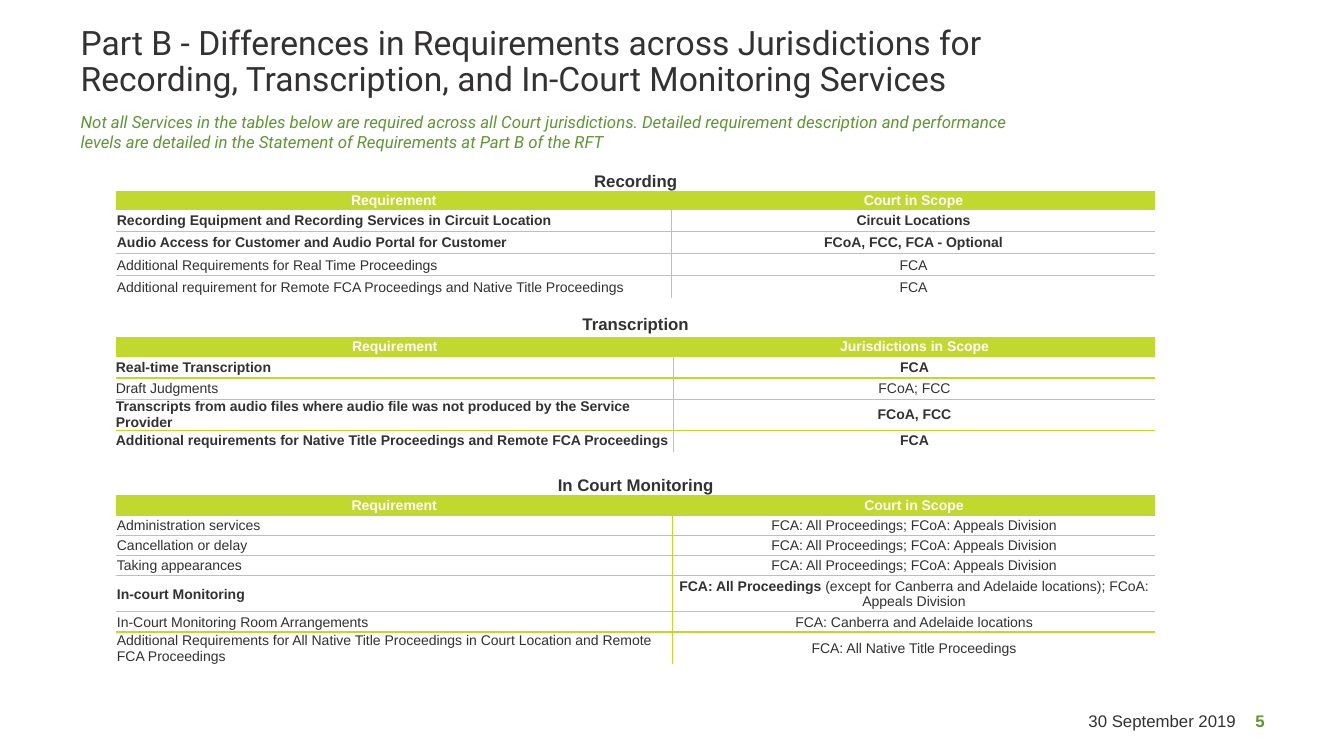
from lxml.etree import SubElement
from pptx import Presentation
from pptx.dml.color import RGBColor
from pptx.enum.text import MSO_ANCHOR, MSO_AUTO_SIZE, PP_ALIGN
from pptx.oxml.ns import qn
from pptx.util import Inches, Pt

INK = RGBColor(0x33, 0x31, 0x32)
GREEN = RGBColor(0x5E, 0x97, 0x32)
LIME = RGBColor(0xC1, 0xD8, 0x2F)
WHITE = RGBColor(0xFF, 0xFF, 0xFF)
NO_STYLE = "{2D5ABB26-0587-4C30-8999-92F81FD0307C}"

# Content
TITLE = ("Part B - Differences in Requirements across Jurisdictions for "
         "Recording, Transcription, and In-Court Monitoring Services")
INTRO = ("Not all Services in the tables below are required across all Court "
         "jurisdictions. Detailed requirement description and performance levels "
         "are detailed in the Statement of Requirements at Part B of the RFT")
DATE = "30 September 2019"
PAGE = "5"
APPEALS = "FCA: All Proceedings; FCoA: Appeals Division"

# Rows: requirement, scope, bold, then any plain text that ends the scope
TABLES = [
    dict(name="Recording", scope="Court in Scope", top=1.7, split=5.51, inset=0.01,
         heights=[0.18, 0.18, 0.22, 0.22, 0.22, 0.22],
         rows=[
             ("Recording Equipment and Recording Services in Circuit Location",
              "Circuit Locations", True),
             ("Audio Access for Customer and Audio Portal for Customer",
              "FCoA, FCC, FCA - Optional", True),
             ("Additional Requirements for Real Time Proceedings", "FCA", False),
             ("Additional requirement for Remote FCA Proceedings and Native Title "
              "Proceedings", "FCA", False),
         ]),
    dict(name="Transcription", scope="Jurisdictions in Scope", top=3.1, split=5.53,
         inset=0, heights=[0.24, 0.2, 0.21, 0.21, 0.31, 0.21],
         rows=[
             ("Real-time Transcription", "FCA", True),
             ("Draft Judgments", "FCoA; FCC", False),
             ("Transcripts from audio files where audio file was not produced by "
              "the Service Provider", "FCoA, FCC", True),
             ("Additional requirements for Native Title Proceedings and Remote FCA "
              "Proceedings", "FCA", True),
         ]),
    dict(name="In Court Monitoring", scope="Court in Scope", top=4.71, split=5.52,
         inset=0.01, heights=[0.2, 0.2, 0.2, 0.2, 0.2, 0.36, 0.2, 0.31],
         rows=[
             ("Administration services", APPEALS, False),
             ("Cancellation or delay", APPEALS, False),
             ("Taking appearances", APPEALS, False),
             ("In-court Monitoring", "FCA: All Proceedings ", True,
              "(except for Canberra and Adelaide locations); FCoA: Appeals Division"),
             ("In-Court Monitoring Room Arrangements",
              "FCA: Canberra and Adelaide locations", False),
             ("Additional Requirements for All Native Title Proceedings in Court "
              "Location and Remote FCA Proceedings",
              "FCA: All Native Title Proceedings", False),
         ]),
]
LEFT, WIDTH = 1.15, 10.31


def style(font, size, color, name="Arial", bold=None, italic=None):
    font.name, font.size, font.bold, font.italic = name, Pt(size), bold, italic
    font.color.rgb = color


def write(box, text, anchor=MSO_ANCHOR.TOP, right=0):
    frame = box.text_frame
    frame.auto_size = MSO_AUTO_SIZE.NONE
    frame.word_wrap = True
    frame.vertical_anchor = anchor
    frame.margin_left = frame.margin_top = frame.margin_bottom = 0
    frame.margin_right = Inches(right)
    para = frame.paragraphs[0]
    para.text = text
    return para


def add_text(slide, area, text, **opts):
    return write(slide.shapes.add_textbox(*map(Inches, area)), text, **opts)


def rule(cell, sides):
    props = cell._tc.get_or_add_tcPr()
    for side in "LRTB":
        line = SubElement(props, qn("a:ln" + side), w=str(Pt(1)))
        if side in sides:
            fill = SubElement(line, qn("a:solidFill"))
            SubElement(fill, qn("a:srgbClr"), val=str(LIME))
        else:
            SubElement(line, qn("a:noFill"))


def fill_cell(cell, parts, size, color, align, inset, sides="", back=None):
    """Parts are pairs of text and bold."""
    cell.vertical_anchor = MSO_ANCHOR.MIDDLE
    cell.margin_left = cell.margin_right = cell.margin_top = Inches(inset)
    cell.margin_bottom = 0
    para = cell.text_frame.paragraphs[0]
    para.alignment = align
    style(para.font, size, color)
    for text, bold in parts:
        run = para.add_run()
        run.text = text
        style(run.font, size, color, bold=bold)
    rule(cell, sides)
    if back:
        cell.fill.solid()
        cell.fill.fore_color.rgb = back
    else:
        cell.fill.background()


def add_grid(slide, data):
    heights, inset = data["heights"], data["inset"]
    count = len(heights)
    frame = slide.shapes.add_table(count, 2, Inches(LEFT), Inches(data["top"]),
                                   Inches(WIDTH), Inches(sum(heights)))
    grid = frame.table
    grid.first_row = grid.horz_banding = False
    grid._tbl.tblPr.find(qn("a:tableStyleId")).text = NO_STYLE
    for col, width in zip(grid.columns, (data["split"], WIDTH - data["split"])):
        col.width = Inches(width)
    for row, height in zip(grid.rows, heights):
        row.height = Inches(height)

    # Caption across both columns
    grid.cell(0, 0).merge(grid.cell(0, 1))
    fill_cell(grid.cell(0, 0), [(data["name"], True)], 12, INK,
              PP_ALIGN.CENTER, inset)

    # Column heads
    for col, text in enumerate(("Requirement", data["scope"])):
        fill_cell(grid.cell(1, col), [(text, True)], 10, WHITE, PP_ALIGN.CENTER,
                  inset, "RL"[col] + "B", LIME)

    # Requirements
    for num, (need, scope, bold, *rest) in enumerate(data["rows"], 2):
        edges = "T" if num == count - 1 else "TB"
        fill_cell(grid.cell(num, 0), [(need, bold)], 10, INK, PP_ALIGN.LEFT,
                  inset, edges + "R")
        parts = [(scope, bold)] + [(text, False) for text in rest]
        fill_cell(grid.cell(num, 1), parts, 10, INK, PP_ALIGN.CENTER,
                  inset, edges + "L")


def main():
    deck = Presentation()
    deck.slide_width, deck.slide_height = Inches(13.33), Inches(7.5)
    slide = deck.slides.add_slide(deck.slide_layouts[5])

    # Title and intro
    title = slide.shapes.title
    title.left, title.top, title.width, title.height = map(
        Inches, (0.8, 0.41, 9.56, 0.57))
    para = write(title, TITLE, MSO_ANCHOR.BOTTOM)
    para.alignment = PP_ALIGN.LEFT
    para.line_spacing = 0.9
    style(para.font, 24, INK, "Roboto")
    para = add_text(slide, (0.8, 1.11, 9.56, 0.57), INTRO)
    style(para.font, 12, GREEN, "Roboto", italic=True)

    # Tables
    for data in TABLES:
        add_grid(slide, data)

    # Footer
    para = add_text(slide, (9.34, 6.95, 3, 0.4), DATE,
                    anchor=MSO_ANCHOR.MIDDLE, right=0.08)
    para.alignment = PP_ALIGN.RIGHT
    style(para.font, 12, INK)
    para = add_text(slide, (12.45, 7.05, 0.52, 0.2), PAGE)
    style(para.font, 12, GREEN, bold=True)

    deck.save("out.pptx")


if __name__ == "__main__":
    main()
